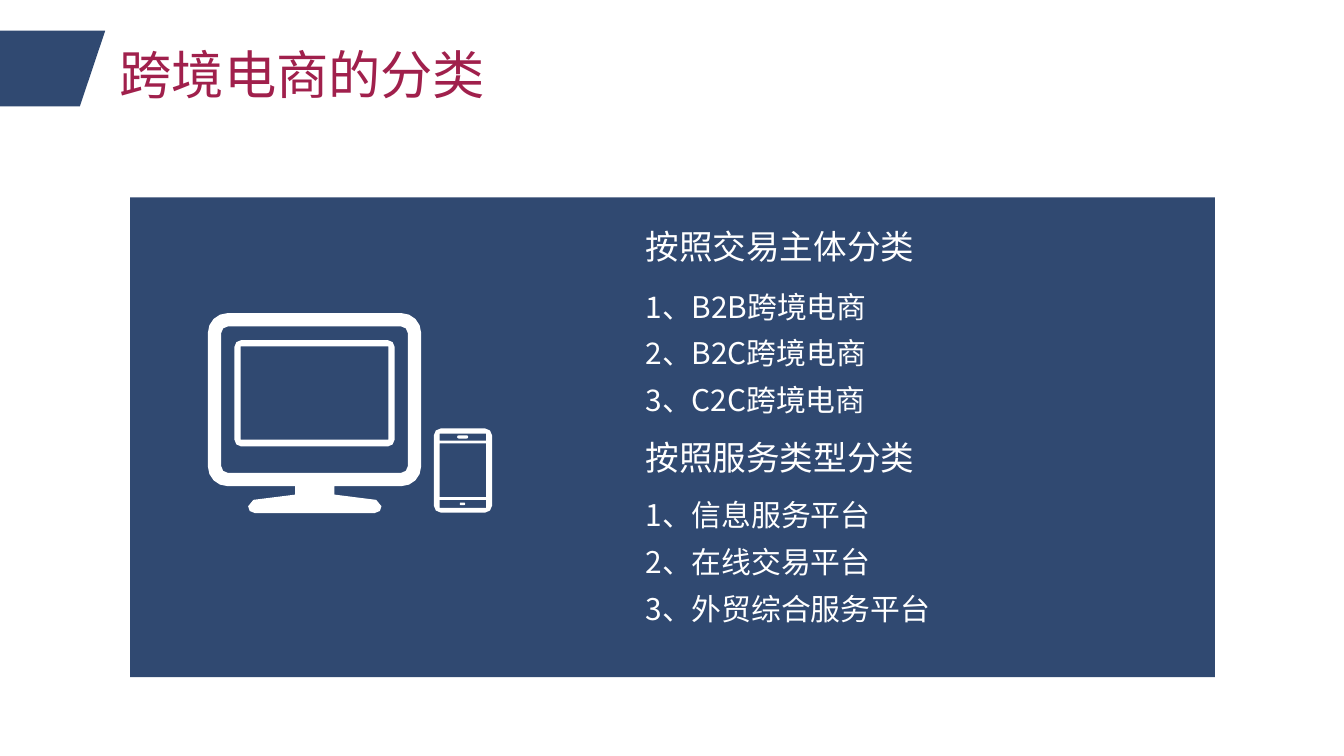
from math import cos, pi, sin

from lxml.etree import SubElement
from pptx import Presentation
from pptx.dml.color import RGBColor
from pptx.enum.shapes import MSO_SHAPE as Preset
from pptx.enum.text import MSO_ANCHOR as Anchor, MSO_AUTO_SIZE as AutoSize, PP_ALIGN as Align
from pptx.oxml.ns import qn
from pptx.util import Cm, Pt

FONT = "Noto Sans CJK SC"
NAVY, CRIMSON, WHITE = "304971", "A0204C", "FFFFFF"


def paint(shape, color):
    shape.shadow.inherit = False
    shape.fill.solid()
    shape.fill.fore_color.rgb = RGBColor.from_string(color)
    shape.line.fill.background()


def write(box, lines, size, color, spacing=None, wrap=True, anchor=Anchor.MIDDLE):
    frame = box.text_frame
    frame.text = "\n".join(lines)
    frame.word_wrap = wrap
    frame.auto_size = AutoSize.NONE
    frame.vertical_anchor = anchor
    for paragraph in frame.paragraphs:
        paragraph.alignment = Align.LEFT
        if spacing:
            paragraph.line_spacing = spacing
        for run in paragraph.runs:
            run.font.size = Pt(size)
            run.font.color.rgb = RGBColor.from_string(color)
            run.font.name = FONT
            SubElement(run.font._element, qn("a:ea"), typeface=FONT)


def add_text(slide, left, top, width, height, lines, size, **style):
    box = slide.shapes.add_textbox(Cm(left), Cm(top), Cm(width), Cm(height))
    write(box, lines, size, WHITE, **style)


def rounded(left, top, right, bottom, radius=0.0, steps=2):
    """Points of a rectangle with rounded corners, clockwise from the lower right."""
    if not radius:
        return [(right, bottom), (left, bottom), (left, top), (right, top)]
    centres = [(right - radius, bottom - radius), (left + radius, bottom - radius),
               (left + radius, top + radius), (right - radius, top + radius)]
    return [(x + radius * cos(angle), y + radius * sin(angle))
            for quarter, (x, y) in enumerate(centres)
            for angle in (pi / 2 * (quarter + step / steps) for step in range(steps + 1))]


def add_outline(slide, color, outer, *holes):
    """One freeform; the holes run the other way round, so they stay open."""
    contours = [[(Cm(x), Cm(y)) for x, y in points]
                for points in (outer, *(hole[::-1] for hole in holes))]
    builder = slide.shapes.build_freeform(*contours[0][0])
    for index, (start, *others) in enumerate(contours):
        if index:
            builder.move_to(*start)
        builder.add_line_segments(others, close=True)
    paint(builder.convert_to_shape(), color)


def add_phone(slide):
    # Case with speaker, display and button areas left open
    add_outline(slide, WHITE, rounded(8.2, 8.1, 9.3, 9.69, 0.13),
                rounded(8.31, 8.2, 9.19, 8.33),
                rounded(8.31, 8.38, 9.19, 9.4),
                rounded(8.31, 9.45, 9.19, 9.6))
    add_outline(slide, WHITE, rounded(8.64, 8.23, 8.85, 8.29, 0.03))
    add_outline(slide, WHITE, rounded(8.69, 9.5, 8.79, 9.55, 0.02))


def add_monitor(slide):
    # Screen frame
    add_outline(slide, WHITE, rounded(4.43, 6.43, 7.46, 8.44, 0.13),
                rounded(4.55, 6.55, 7.34, 8.31))
    # Case, with the mirrored foot let into its lower edge
    steps, middle = 4, 5.95
    case = rounded(3.93, 5.92, 7.96, 9.19, 0.37, steps)
    foot_right = [(6.32, 9.19), (6.32, 9.35), (7.11, 9.45), (7.21, 9.57),
                  (7.18, 9.66), (7.08, 9.7)]
    foot_left = [(2 * middle - x, y) for x, y in reversed(foot_right)]
    corner = steps + 1
    add_outline(slide, WHITE, case[:corner] + foot_right + foot_left + case[corner:],
                rounded(4.18, 6.17, 7.71, 8.94, 0.13))


def add_group(slide, heading_top, items_top, heading, items):
    left = 11.95
    numbered = [f"{number}、{item}" for number, item in enumerate(items, 1)]
    add_text(slide, left, items_top, 8.46, 2.92, numbered, 16, spacing=1.3, anchor=Anchor.TOP)
    add_text(slide, left, heading_top, 5.59, 1.02, [heading], 18, wrap=False)


def main():
    deck = Presentation()
    deck.slide_width, deck.slide_height = Cm(25.4), Cm(14.29)
    slide = deck.slides.add_slide(deck.slide_layouts[5])

    # Title with its slanted marker
    add_outline(slide, NAVY, [(0, 0.58), (1.99, 0.58), (1.51, 2.01), (0, 2.01)])
    title = slide.shapes.title
    title.left, title.top, title.width, title.height = Cm(2.01), Cm(0.67), Cm(8.66), Cm(1.45)
    write(title, ["跨境电商的分类"], 28, CRIMSON)

    # Panel with the devices
    panel = slide.shapes.add_shape(Preset.RECTANGLE, Cm(2.46), Cm(3.73), Cm(20.5), Cm(9.07))
    paint(panel, NAVY)
    add_phone(slide)
    add_monitor(slide)

    # The two classifications
    add_group(slide, 4.14, 5.12, "按照交易主体分类",
              ["B2B跨境电商", "B2C跨境电商", "C2C跨境电商"])
    add_group(slide, 8.13, 9.07, "按照服务类型分类",
              ["信息服务平台", "在线交易平台", "外贸综合服务平台"])

    deck.save("out.pptx")


if __name__ == "__main__":
    main()
